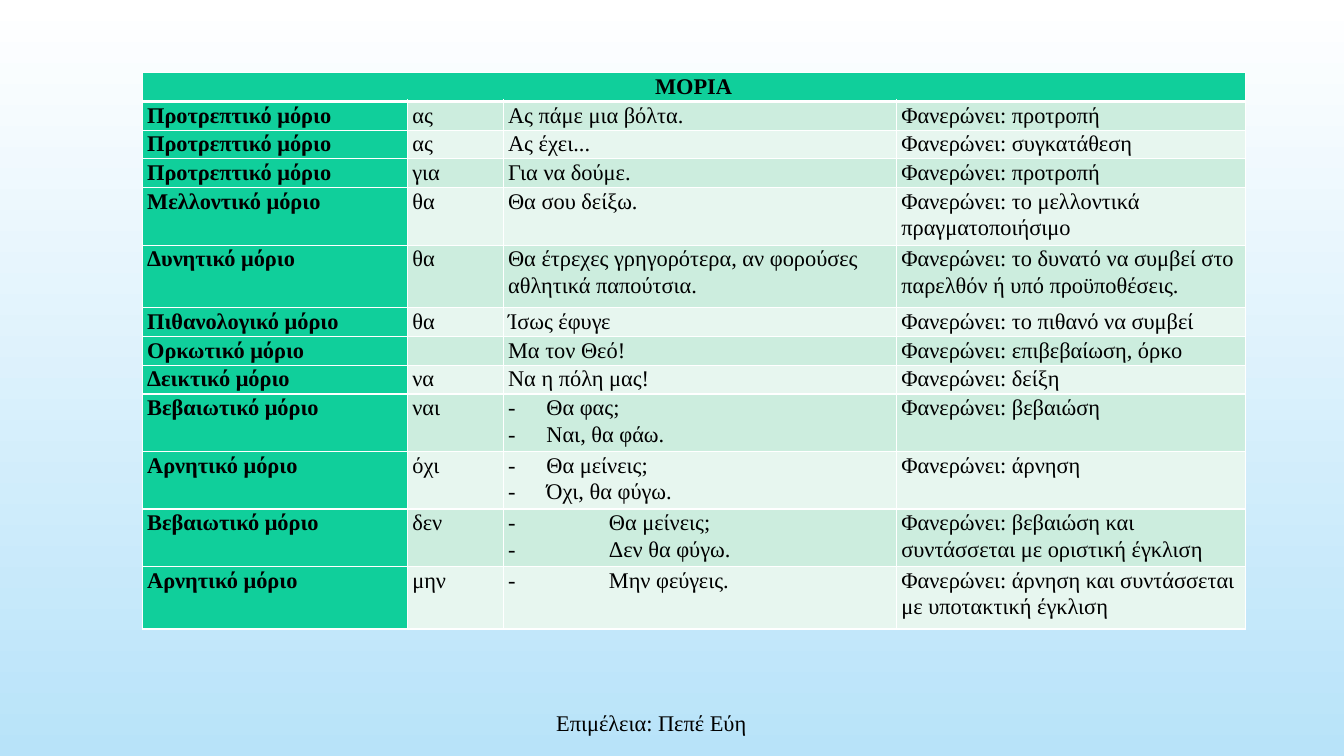
from lxml import etree
from pptx import Presentation, util as u
from pptx.dml.color import RGBColor
from pptx.enum import text
from pptx.oxml import ns

WIDE, HIGH = 13.33, 7.5
FONT, SIZE = "Times New Roman", 16
BLACK, WHITE, GREEN = "000000", "FFFFFF", "10CF9B"
BANDS = ["CCEDDE", "E7F6EF"]
COLS = [2.63, 0.95, 3.9, 3.46]
LINE, TALL = 0.2, 0.62  # least height of a text line, and of the taller rows

# Kind, word, examples, meaning; "- " starts a bulleted line
HEAD = "ΜΟΡΙΑ"
ROWS = [
    ("Προτρεπτικό μόριο", "ας", "Ας πάμε μια βόλτα.", "προτροπή", LINE),
    ("Προτρεπτικό μόριο", "ας", "Ας έχει...", "συγκατάθεση", LINE),
    ("Προτρεπτικό μόριο", "για", "Για να δούμε.", "προτροπή", LINE),
    ("Μελλοντικό μόριο", "θα", "Θα σου δείξω.",
     "το μελλοντικά πραγματοποιήσιμο", 2 * LINE),
    ("Δυνητικό μόριο", "θα",
     "Θα έτρεχες γρηγορότερα, αν φορούσες αθλητικά παπούτσια.",
     "το δυνατό να συμβεί στο παρελθόν ή υπό προϋποθέσεις.", TALL),
    ("Πιθανολογικό μόριο", "θα", "Ίσως έφυγε", "το πιθανό να συμβεί", LINE),
    ("Ορκωτικό μόριο", "", "Μα τον Θεό!", "επιβεβαίωση, όρκο", LINE),
    ("Δεικτικό μόριο", "να", "Να η πόλη μας!", "δείξη", LINE),
    ("Βεβαιωτικό μόριο", "ναι", "- Θα φας;\n- Ναι, θα φάω.",
     "βεβαιώση", 2 * LINE),
    ("Αρνητικό μόριο", "όχι", "- Θα μείνεις;\n- Όχι, θα φύγω.",
     "άρνηση", 2 * LINE),
    ("Βεβαιωτικό μόριο", "δεν", "-\tΘα μείνεις;\n-\tΔεν θα φύγω.",
     "βεβαιώση και συντάσσεται με οριστική έγκλιση", 2 * LINE),
    ("Αρνητικό μόριο", "μην", "-\tΜην φεύγεις.",
     "άρνηση και συντάσσεται με υποτακτική έγκλιση", TALL),
]


def paint(color, tone):
    color.rgb = RGBColor.from_string(tone)


def style(para, bold=False):
    for run in para.runs:
        run.font.name, run.font.size = FONT, u.Pt(SIZE)
        run.font.bold = bold
        paint(run.font.color, BLACK)
    # The paragraph mark takes the size of the text
    end = etree.SubElement(para._p, ns.qn("a:endParaRPr"))
    end.set("sz", str(SIZE * 100))
    etree.SubElement(end, ns.qn("a:latin")).set("typeface", FONT)


def bullet(para):
    props = para._p.get_or_add_pPr()
    props.set("marL", str(u.Inches(0.38)))
    props.set("indent", str(-u.Inches(0.38)))
    etree.SubElement(props, ns.qn("a:buFont")).set("typeface", FONT)
    etree.SubElement(props, ns.qn("a:buChar")).set("char", "-")


def tab(para):
    stops = etree.SubElement(para._p.get_or_add_pPr(), ns.qn("a:tabLst"))
    etree.SubElement(stops, ns.qn("a:tab"), pos=str(u.Inches(1)), algn="l")


def border(cell, base):
    """White edges; base is the width of the bottom edge in points."""
    props = cell._tc.get_or_add_tcPr()
    sides = [("L", 1), ("R", 1), ("T", 1), ("B", base)]
    for spot, (side, width) in enumerate(sides):
        edge = etree.Element(ns.qn("a:ln" + side), w=str(u.Pt(width)))
        solid = etree.SubElement(edge, ns.qn("a:solidFill"))
        etree.SubElement(solid, ns.qn("a:srgbClr")).set("val", WHITE)
        props.insert(spot, edge)


def write(cell, words, tone, bold=False, base=1):
    cell.margin_left = cell.margin_right = u.Inches(0.05)
    cell.margin_top = cell.margin_bottom = 0
    cell.fill.solid()
    paint(cell.fill.fore_color, tone)
    border(cell, base)
    frame = cell.text_frame
    for spot, line in enumerate(words.split("\n")):
        para = frame.add_paragraph() if spot else frame.paragraphs[0]
        para.text = line.removeprefix("- ")
        if line.startswith("- "):
            bullet(para)
        elif "\t" in line:
            tab(para)
        para.line_spacing = 1.07
        style(para, bold)


def backdrop(slide):
    fill = slide.background.fill
    fill.gradient()
    fill.gradient_angle = 270
    for stop, tone, place in zip(fill.gradient_stops, [WHITE, "B8E3F9"], [0, 1]):
        paint(stop.color, tone)
        stop.position = place


def chart(slide):
    highs = [LINE] + [row[-1] for row in ROWS]
    grid = slide.shapes.add_table(
        len(highs), len(COLS), u.Inches(1.41), u.Inches(0.72),
        u.Inches(sum(COLS)), u.Inches(sum(highs))).table
    for col, width in zip(grid.columns, COLS):
        col.width = u.Inches(width)
    for row, high in zip(grid.rows, highs):
        row.height = u.Inches(high)

    # Heading across all columns
    for spot in range(len(COLS)):
        write(grid.cell(0, spot), "" if spot else HEAD, GREEN, True, 3)
    top = grid.cell(0, 0)
    top.merge(grid.cell(0, len(COLS) - 1))
    top.text_frame.paragraphs[0].alignment = text.PP_ALIGN.CENTER

    # Banded rows with a green first column
    for spot, (kind, word, case, sense, _) in enumerate(ROWS):
        cells = [kind, word, case, "Φανερώνει: " + sense]
        for col, words in enumerate(cells):
            tone = BANDS[spot % 2] if col else GREEN
            write(grid.cell(spot + 1, col), words, tone, col == 0)


def credit(slide):
    box = slide.shapes.add_textbox(
        u.Inches(2.81), u.Inches(6.97), u.Inches(7.3), u.Inches(0.4))
    frame = box.text_frame
    frame.word_wrap = True
    frame.vertical_anchor = text.MSO_ANCHOR.MIDDLE
    frame.text = "Επιμέλεια: Πεπέ Εύη"
    frame.paragraphs[0].alignment = text.PP_ALIGN.CENTER
    style(frame.paragraphs[0])


def main():
    deck = Presentation()
    deck.slide_width, deck.slide_height = u.Inches(WIDE), u.Inches(HIGH)
    slide = deck.slides.add_slide(deck.slide_layouts[6])
    backdrop(slide)
    credit(slide)
    chart(slide)
    deck.save("out.pptx")


if __name__ == "__main__":
    main()
